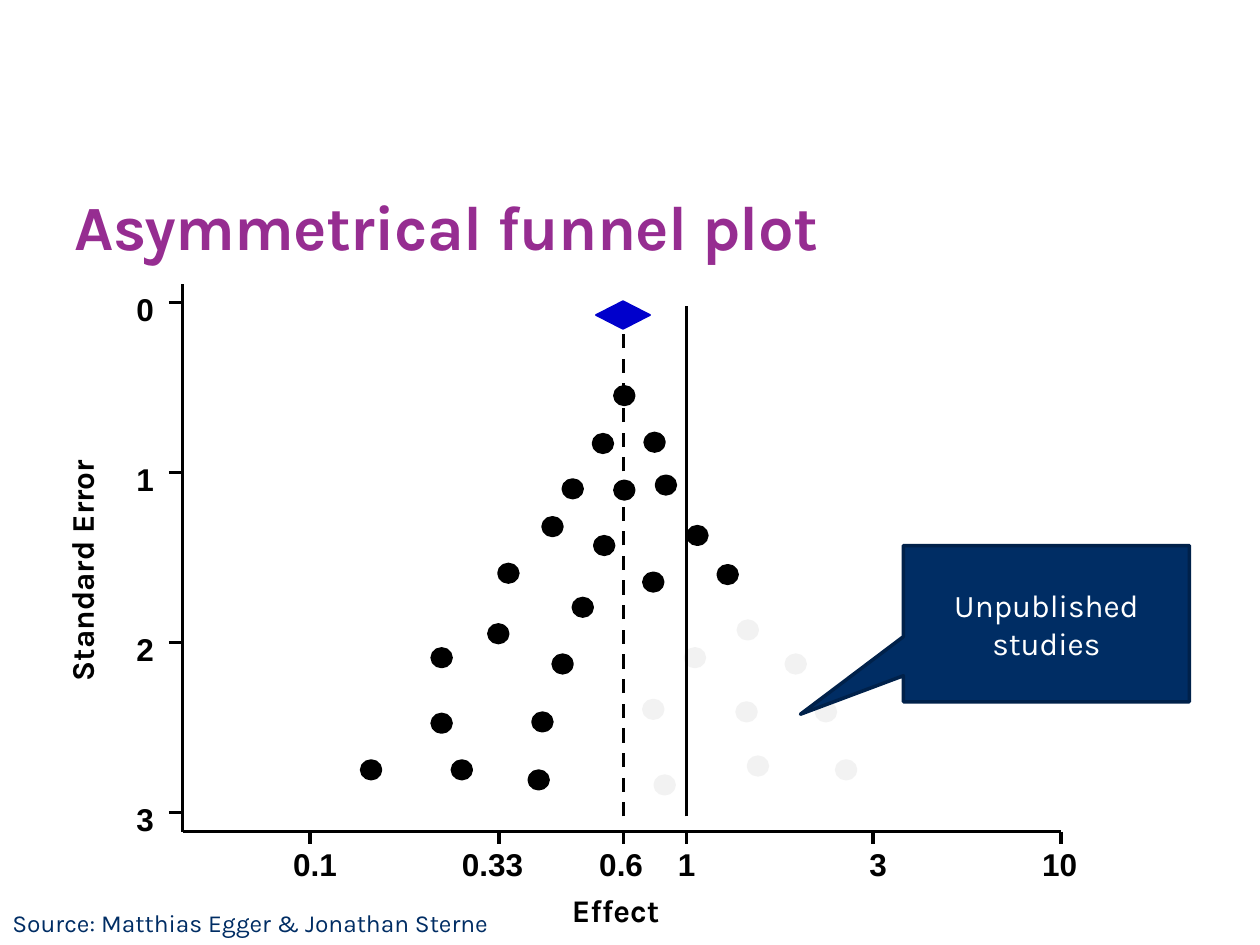
import pptx
import pptx.dml.color
import pptx.enum.dml
import pptx.enum.shapes
import pptx.enum.text
import pptx.oxml.ns
import pptx.util
from lxml import etree
from pptx.util import Inches

rgb = pptx.dml.color.RGBColor.from_string
SHAPE = pptx.enum.shapes.MSO_SHAPE
ALIGN = pptx.enum.text.PP_ALIGN
ANCHOR = pptx.enum.text.MSO_ANCHOR

BLACK, GREY, NAVY = "000000", "F2F2F2", "002D64"


def add_line(shapes, x1, y1, x2, y2, width=2):
    line = shapes.add_connector(
        pptx.enum.shapes.MSO_CONNECTOR.STRAIGHT,
        Inches(x1), Inches(y1), Inches(x2), Inches(y2))
    line.line.color.rgb = rgb(BLACK)
    line.line.width = pptx.util.Pt(width)
    etree.SubElement(line._element.spPr, pptx.oxml.ns.qn("a:effectLst"))
    return line


def add_text(text, left, top, width, height, font="Karla", size=18,
             color=BLACK, bold=True, align=ALIGN.LEFT, wrap=False):
    box = slide.shapes.add_textbox(
        Inches(left), Inches(top), Inches(width), Inches(height))
    box.text_frame.word_wrap = wrap
    paragraph = box.text_frame.paragraphs[0]
    paragraph.text = text
    paragraph.alignment = align
    paragraph.font.name = font
    paragraph.font.size = pptx.util.Pt(size)
    paragraph.font.bold = bold
    paragraph.font.color.rgb = rgb(color)
    return box


presentation = pptx.Presentation()
presentation.slide_width = Inches(10)
presentation.slide_height = Inches(7.5)
slide = presentation.slides.add_slide(presentation.slide_layouts[5])

# Title
title = slide.shapes.title
title.left, title.top = Inches(0.47), Inches(1.38)
title.width, title.height = Inches(6.69), Inches(0.71)
frame = title.text_frame
frame.auto_size = pptx.enum.text.MSO_AUTO_SIZE.NONE
frame.vertical_anchor = ANCHOR.BOTTOM
frame.margin_left = Inches(0.12)
frame.margin_right = frame.margin_top = frame.margin_bottom = 0
paragraph = frame.paragraphs[0]
paragraph.text = "Asymmetrical funnel plot"
paragraph.alignment = ALIGN.LEFT
paragraph.font.name = "Karla"
paragraph.font.size = pptx.util.Pt(36)
paragraph.font.bold = True
paragraph.font.color.rgb = rgb("962D91")
paragraph.runs[0]._r.get_or_add_rPr().set("spc", "-40")

# Axes with ticks and labels
axis_x, axis_y = 1.45, 6.6
add_line(slide.shapes, axis_x, axis_y, 8.42, axis_y)
add_line(slide.shapes, axis_x, axis_y, axis_x, 2.25)

effect_ticks = [  # label, tick x, label centre x
    ("0.1", 2.46, 2.5), ("0.33", 3.96, 3.91), ("0.6", 4.95, 4.93),
    ("1", 5.45, 5.45), ("3", 6.93, 6.97), ("10", 8.42, 8.41),
]
for label, tick_x, center in effect_ticks:
    add_line(slide.shapes, tick_x, axis_y, tick_x, axis_y + 0.1)
    add_text(label, center - 0.4, 6.66, 0.8, 0.47, "Arial", align=ALIGN.CENTER)

for error in range(4):
    tick_y = 2.4 + 1.35 * error
    add_line(slide.shapes, axis_x - 0.11, tick_y, axis_x, tick_y)
    add_text(str(error), 0.92, tick_y - 0.15, 0.4, 0.47, "Arial",
             align=ALIGN.RIGHT)

# Studies, as left and top of each dot
published = [
    (4.88, 3.07), (4.71, 3.45), (5.12, 3.44), (4.47, 3.81), (4.88, 3.82),
    (5.21, 3.78), (4.31, 4.11), (5.46, 4.18), (4.72, 4.26), (3.96, 4.48),
    (5.7, 4.49), (5.11, 4.55), (4.55, 4.75), (3.88, 4.96), (3.43, 5.15),
    (4.39, 5.2), (3.43, 5.67), (4.23, 5.66), (2.87, 6.04), (3.59, 6.04),
    (4.2, 6.12),
]
unpublished = [
    (5.86, 4.93), (5.44, 5.15), (6.24, 5.2), (5.11, 5.56), (5.85, 5.58),
    (6.48, 5.58), (5.94, 6.01), (6.64, 6.04), (5.2, 6.16),
]
for studies, color in ((published, BLACK), (unpublished, GREY)):
    for left, top in studies:
        dot = slide.shapes.add_shape(
            SHAPE.OVAL, Inches(left), Inches(top), Inches(0.15), Inches(0.14))
        dot.shadow.inherit = False
        dot.fill.solid()
        dot.fill.fore_color.rgb = rgb(color)
        dot.line.color.rgb = rgb(color)
        dot.line.width = pptx.util.Pt(2)

# No-effect line, and pooled effect with its diamond
add_line(slide.shapes, 5.45, 6.48, 5.45, 2.43, 1.5)
pooled = slide.shapes.add_group_shape()
pooled_line = add_line(pooled.shapes, 4.95, 6.48, 4.95, 2.43)
pooled_line.line.dash_style = pptx.enum.dml.MSO_LINE.DASH
diamond = pooled.shapes.add_shape(
    SHAPE.DIAMOND, Inches(4.73), Inches(2.39), Inches(0.43), Inches(0.22))
diamond.shadow.inherit = False
diamond.fill.solid()
diamond.fill.fore_color.rgb = rgb("0000CC")
diamond.line.color.rgb = rgb("0000CC")
diamond.line.width = pptx.util.Pt(1)

# Axis titles and source
add_text("Effect", 4.44, 7.02, 0.99, 0.51)
error_title = add_text("Standard Error", -0.42, 4.13, 2.24, 0.51)
error_title.rotation = 270
add_text("Source: Matthias Egger & Jonathan Sterne", 0, 7.16, 4.31, 0.34,
         size=14, color=NAVY, bold=False, wrap=True)

# Callout
callout = slide.shapes.add_shape(
    SHAPE.RECTANGULAR_CALLOUT,
    Inches(7.17), Inches(4.33), Inches(2.27), Inches(1.24))
callout.adjustments[0] = -0.86
callout.adjustments[1] = 0.58
callout.shadow.inherit = False
callout.fill.solid()
callout.fill.fore_color.rgb = rgb(NAVY)
callout.line.color.rgb = rgb("00214A")
callout.line.width = pptx.util.Pt(2)
callout.text_frame.word_wrap = True
callout.text_frame.vertical_anchor = ANCHOR.MIDDLE
paragraph = callout.text_frame.paragraphs[0]
paragraph.text = "Unpublished studies"
paragraph.alignment = ALIGN.CENTER
paragraph.font.name = "Karla"
paragraph.font.size = pptx.util.Pt(18)
paragraph.font.color.rgb = rgb("FFFFFF")

presentation.save("out.pptx")
